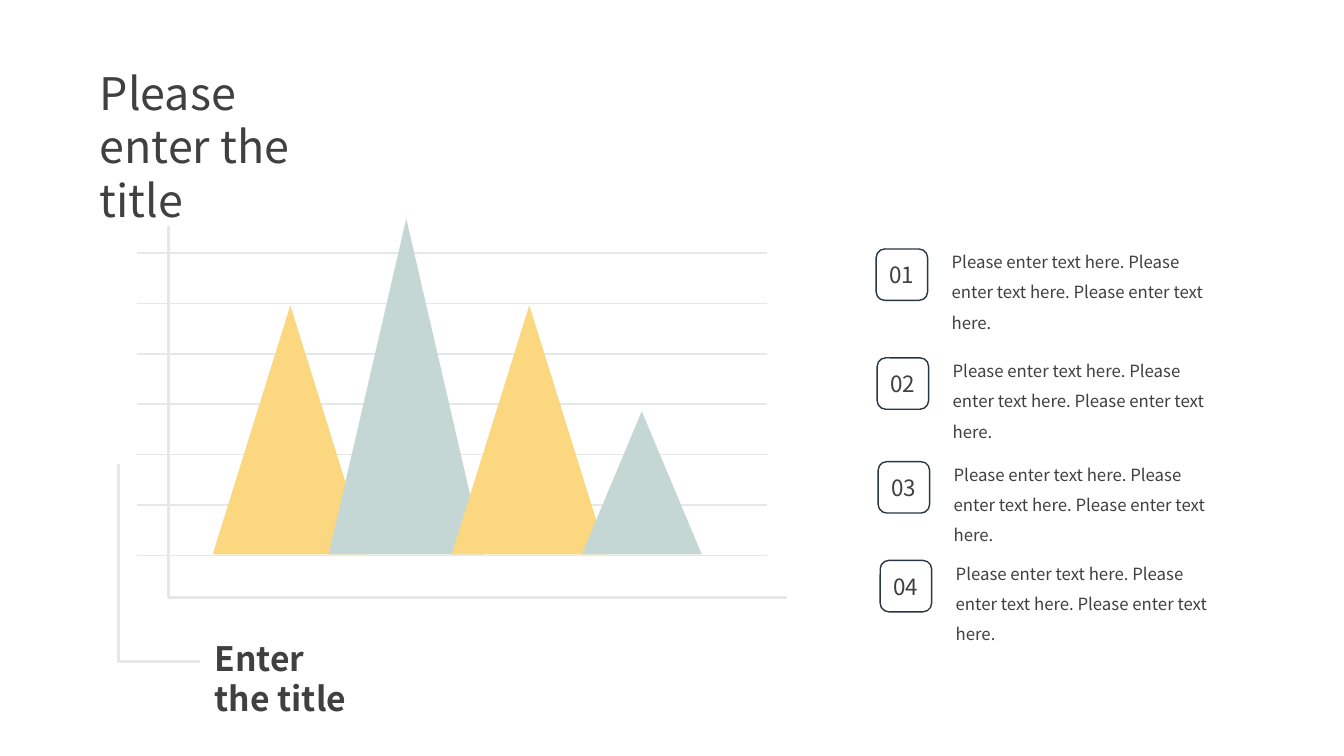
from lxml import etree
from pptx import Presentation
from pptx.dml.color import RGBColor
from pptx.enum.shapes import MSO_CONNECTOR, MSO_SHAPE
from pptx.enum.text import MSO_ANCHOR, MSO_AUTO_SIZE, PP_ALIGN
from pptx.oxml.ns import qn
from pptx.util import Pt

STRAIGHT = MSO_CONNECTOR.STRAIGHT
TRIANGLE = MSO_SHAPE.ISOSCELES_TRIANGLE
ROUNDED = MSO_SHAPE.ROUNDED_RECTANGLE
MIDDLE = MSO_ANCHOR.MIDDLE
CENTER = PP_ALIGN.CENTER
FIT_SHAPE = MSO_AUTO_SIZE.SHAPE_TO_FIT_TEXT

PX = 9144  # EMU; 100 px to the inch
FONT = "Noto Sans CJK SC"
COLORS = {
    "text": "404040",
    "grid": "E6E7E8",
    "yellow": "FBD77F",
    "teal": "C4D7D5",
    "badge": "283743",
}
BODY = "Please enter text here. Please enter text here. Please enter text here."


def rgb(name):
    return RGBColor.from_string(COLORS[name])


def write(sp, text, size, bold=False, **paragraph_format):
    tf = sp.text_frame
    tf.word_wrap = True
    p = tf.paragraphs[0]
    for key, value in paragraph_format.items():
        setattr(p, key, value)
    r = p.add_run()
    r.text = text
    for key, value in {"name": FONT, "size": Pt(size), "bold": bold}.items():
        setattr(r.font, key, value)
    r.font.color.rgb = rgb("text")
    return tf


prs = Presentation()
prs.slide_width, prs.slide_height = 1333 * PX, 750 * PX
s = prs.slides.add_slide(prs.slide_layouts[6])

# Title
title = s.shapes.add_textbox(89 * PX, 60 * PX, 242 * PX, 64 * PX)
write(title, "Please enter the title", 32).auto_size = FIT_SHAPE

# Grid lines
for i in range(7):
    y = (251 + 50 * i) * PX
    line = s.shapes.add_connector(STRAIGHT, 136 * PX, y, 761 * PX, y)
    line.line.color.rgb = rgb("grid")
    line.line.width = Pt(1.25)
    etree.SubElement(line._element.spPr, qn("a:effectLst"))

# Peaks standing on the lowest grid line
BASE = 550
for left, width, height, color in [
    (211, 154, 247, "yellow"),
    (326, 154, 333, "teal"),
    (448, 154, 247, "yellow"),
    (577, 119, 142, "teal"),
]:
    peak = s.shapes.add_shape(
        TRIANGLE, left * PX, (BASE - height) * PX, width * PX, height * PX)
    peak.shadow.inherit = False
    peak.fill.solid()
    peak.fill.fore_color.rgb = rgb(color)
    peak.line.fill.background()

# Chart axes and the bracket leading to the caption
for left, top, right, bottom, weight in [
    (167, 224, 781, 593, 2.38),
    (118, 460, 198, 656, 2.13),
]:
    builder = s.shapes.build_freeform(left, top, scale=PX)
    builder.add_line_segments([(left, bottom), (right, bottom)], close=False)
    corner = builder.convert_to_shape()
    corner.shadow.inherit = False
    corner.fill.background()
    corner.line.color.rgb = rgb("grid")
    corner.line.width = Pt(weight)

# Caption
caption = s.shapes.add_textbox(213 * PX, 633 * PX, 135 * PX, 40 * PX)
tf = write(caption, "Enter the title", 24, bold=True)
tf.auto_size = FIT_SHAPE
for side in ("left", "top", "right", "bottom"):
    setattr(tf, f"margin_{side}", 0)

# Numbered notes
for number, (x, y) in enumerate([(869, 247), (870, 355), (871, 458), (873, 556)], 1):
    badge = s.shapes.add_shape(ROUNDED, x * PX, y * PX, 51 * PX, 51 * PX)
    badge.shadow.inherit = False
    badge.fill.background()
    badge.line.color.rgb = rgb("badge")
    badge.line.width = Pt(1)
    tf = write(badge, f"{number:02}", 16, alignment=CENTER)
    tf.vertical_anchor = MIDDLE

    note = s.shapes.add_textbox((x + 65) * PX, (y - 12) * PX, 275 * PX, 97 * PX)
    write(note, BODY, 12, line_spacing=1.5).auto_size = FIT_SHAPE

prs.save("out.pptx")
